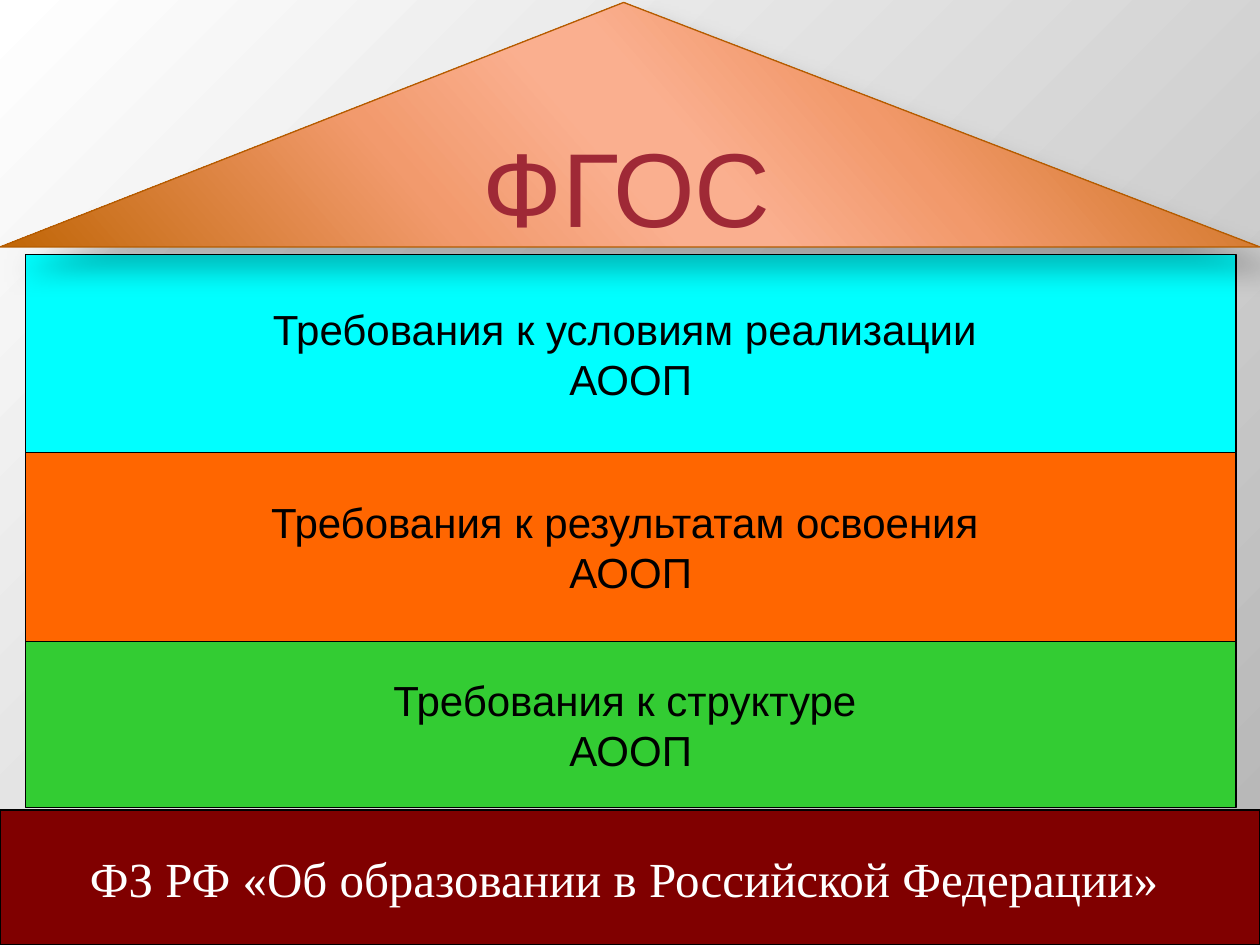
from dataclasses import dataclass

import pptx
import pptx.dml.color
import pptx.enum.shapes
import pptx.enum.text
import pptx.oxml
import pptx.oxml.ns
import pptx.util
from pptx.util import Cm, Pt

SLIDE_WIDTH, SLIDE_HEIGHT = 25.4, 19.05
WALL_LEFT, WALL_TOP, WALL_WIDTH = 0.51, 5.13, 24.41
FOUNDATION_TOP = 16.33


@dataclass(frozen=True)
class Theme:
    sans: str = "Arial"
    serif: str = "Times New Roman"
    roof_size: int = 60
    floor_size: int = 24
    foundation_size: int = 28
    black: str = "000000"
    white: str = "FFFFFF"
    conditions: str = "00FFFF"
    results: str = "FF6600"
    structure: str = "33CC33"
    foundation: str = "800000"
    roof_line: str = "B55C00"
    roof_text: str = "9F2936"
    roof_stops: tuple = ((0, "C06607"), (33, "F2996B"), (47, "FAAF8F"),
                         (53, "FAAF8F"), (68, "F29A6D"), (100, "C06607"))
    background_stops: tuple = ((0, "FFFFFF"), (100, "B4B4B4"))


THEME = Theme()


def rgb(color):
    return pptx.dml.color.RGBColor.from_string(color)


def drawing_xml(markup):
    """Parse a fragment whose root element gets the drawing namespace."""
    root, rest = markup.split(">", 1)
    return pptx.oxml.parse_xml(f"{root} {pptx.oxml.ns.nsdecls('a')}>{rest}")


def apply_gradient(fill, owner, stops, shading):
    """Put a gradient where the solid fill of owner would stand."""
    fill.solid()
    solid = owner.find(pptx.oxml.ns.qn("a:solidFill"))
    stop_list = "".join(
        f'<a:gs pos="{position * 1000}"><a:srgbClr val="{color}"/></a:gs>'
        for position, color in stops)
    owner.replace(solid, drawing_xml(
        f"<a:gradFill><a:gsLst>{stop_list}</a:gsLst>{shading}</a:gradFill>"))


def add_block(slide, preset, box, lines, font, size, text_color, line_color, wrap=False):
    """Add a centred, outlined shape; box is left, top, width, height in cm."""
    block = slide.shapes.add_shape(preset, *(Cm(length) for length in box))
    block.shadow.inherit = False
    block.line.color.rgb = rgb(line_color)
    block.line.width = Pt(0.75)
    frame = block.text_frame
    frame.word_wrap = wrap
    frame.vertical_anchor = pptx.enum.text.MSO_ANCHOR.MIDDLE
    frame.text = "\n".join(lines)
    for paragraph in frame.paragraphs:
        paragraph.alignment = pptx.enum.text.PP_ALIGN.CENTER
        for run in paragraph.runs:
            run.font.name = font
            run.font.size = Pt(size)
            run.font.color.rgb = rgb(text_color)
    return block


def add_slab(slide, box, lines, fill, font, size, text_color):
    slab = add_block(slide, pptx.enum.shapes.MSO_SHAPE.RECTANGLE, box, lines,
                     font, size, text_color, THEME.black)
    slab.fill.solid()
    slab.fill.fore_color.rgb = rgb(fill)


def add_floors(slide):
    floors = (
        ("Требования к условиям реализации ", THEME.conditions, 3.99),
        ("Требования к результатам освоения ", THEME.results, 3.81),
        ("Требования к структуре ", THEME.structure, 3.35),
    )
    top = WALL_TOP
    for requirement, color, height in floors:
        add_slab(slide, (WALL_LEFT, top, WALL_WIDTH, height), (requirement, "АООП"),
                 color, THEME.sans, THEME.floor_size, THEME.black)
        top += height


def add_roof(slide):
    roof = add_block(slide, pptx.enum.shapes.MSO_SHAPE.ISOSCELES_TRIANGLE,
                     (0, 0.05, SLIDE_WIDTH, 4.93), ("ФГОС",), THEME.sans,
                     THEME.roof_size, THEME.roof_text, THEME.roof_line, wrap=True)
    roof.adjustments[0] = 0.495
    properties = roof.element.spPr
    apply_gradient(roof.fill, properties, THEME.roof_stops,
                   f'<a:lin ang="{139 * 60000}" scaled="0"/>')
    properties.find(pptx.oxml.ns.qn("a:effectLst")).append(drawing_xml(
        f'<a:outerShdw blurRad="{Pt(15)}" dist="{Pt(18)}" dir="{45 * 60000}" '
        f'rotWithShape="0"><a:srgbClr val="{THEME.black}">'
        '<a:alpha val="26000"/></a:srgbClr></a:outerShdw>'))


def paint_background(slide):
    fill = slide.background.fill
    properties = slide.element.find(".//" + pptx.oxml.ns.qn("p:bgPr"))
    apply_gradient(fill, properties, THEME.background_stops,
                   '<a:path path="circle">'
                   '<a:fillToRect r="100000" b="100000"/></a:path>')


def main():
    presentation = pptx.Presentation()
    presentation.slide_width = Cm(SLIDE_WIDTH)
    presentation.slide_height = Cm(SLIDE_HEIGHT)
    slide = presentation.slides.add_slide(presentation.slide_layouts[6])

    paint_background(slide)
    add_slab(slide, (0, FOUNDATION_TOP, SLIDE_WIDTH, SLIDE_HEIGHT - FOUNDATION_TOP),
             ("ФЗ РФ «Об образовании в Российской Федерации» ",),
             THEME.foundation, THEME.serif, THEME.foundation_size, THEME.white)
    add_floors(slide)
    add_roof(slide)

    presentation.save("out.pptx")


if __name__ == "__main__":
    main()
